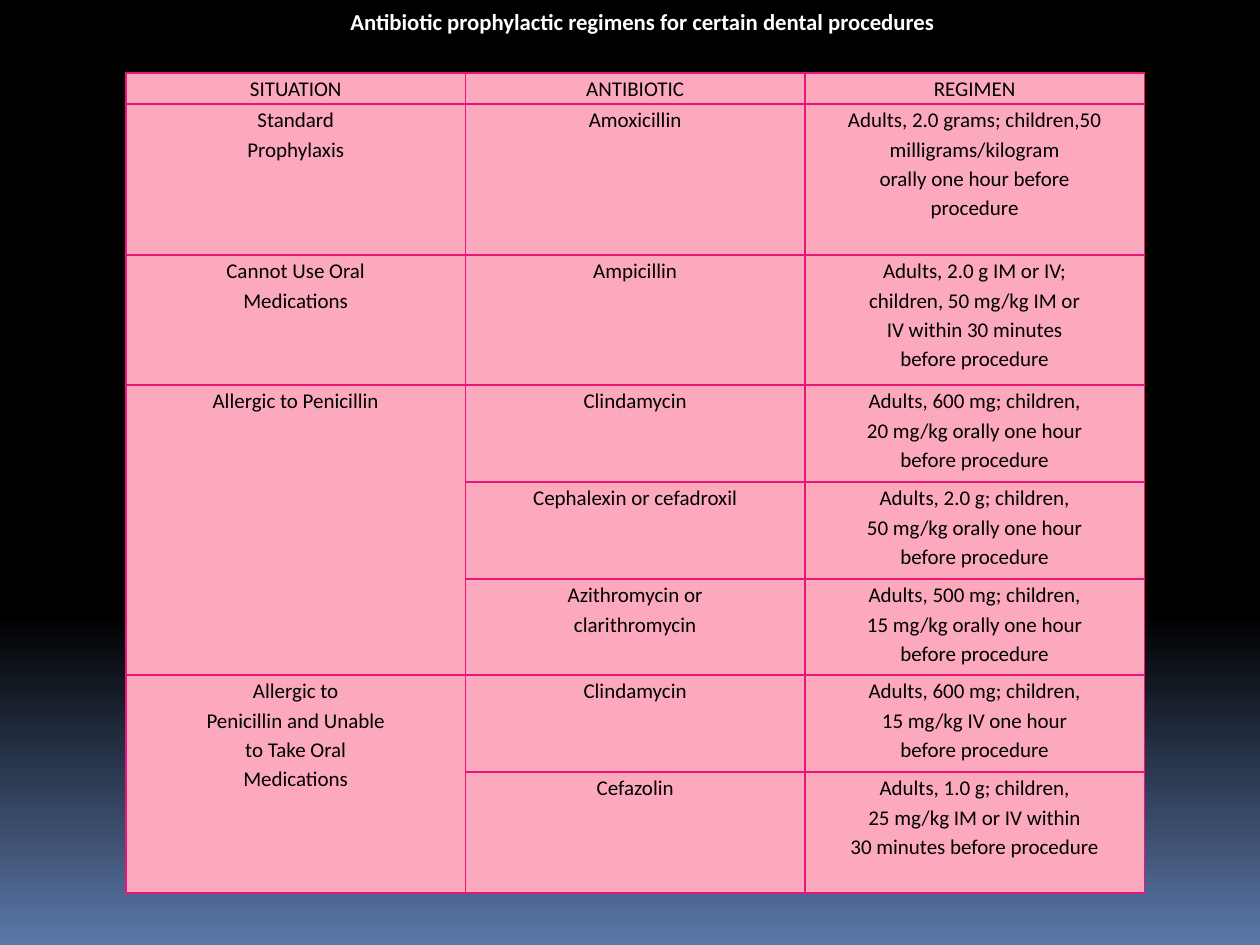
"""Build a slide with a table of antibiotic prophylactic regimens."""
from copy import deepcopy

from lxml import etree
from pptx import Presentation
from pptx import util as u
from pptx.dml.color import RGBColor
from pptx.enum import text
from pptx.oxml.ns import qn

PX = 914400 // 126
TITLE = "Antibiotic prophylactic regimens for certain dental procedures"
ROWS = [
    ("SITUATION", "ANTIBIOTIC", "REGIMEN"),
    ("Standard\nProphylaxis", "Amoxicillin",
     "Adults, 2.0 grams; children,50 milligrams/kilogram\norally one hour before\nprocedure"),
    ("Cannot Use Oral\nMedications", "Ampicillin",
     "Adults, 2.0 g IM or IV;\nchildren, 50 mg/kg IM or\nIV within 30 minutes\nbefore procedure"),
    ("Allergic to Penicillin", "Clindamycin",
     "Adults, 600 mg; children,\n20 mg/kg orally one hour\nbefore procedure"),
    ("", "Cephalexin or cefadroxil",
     "Adults, 2.0 g; children,\n50 mg/kg orally one hour\nbefore procedure"),
    ("", "Azithromycin or\nclarithromycin",
     "Adults, 500 mg; children,\n15 mg/kg orally one hour\nbefore procedure"),
    ("Allergic to\nPenicillin and Unable\nto Take Oral\nMedications", "Clindamycin",
     "Adults, 600 mg; children,\n15 mg/kg IV one hour\nbefore procedure"),
    ("", "Cefazolin",
     "Adults, 1.0 g; children,\n25 mg/kg IM or IV within\n30 minutes before procedure"),
]
HEIGHTS = [31, 151, 130, 97, 97, 96, 97, 121]
MERGES = [(3, 5), (6, 7)]
LEFT, TOP, COL_W = 126, 73, 339.5
PINK, EDGE, BLACK, WHITE, BLUE = "FCA9BD", "EA157A", "000000", "FFFFFF", "5B77A8"
MARGINS = dict(margin_left=u.Inches(0.05), margin_right=u.Inches(0.05),
               margin_top=0, margin_bottom=0)


def px(n):
    return u.Emu(int(n * PX))


def rgb(value):
    return RGBColor.from_string(value)


def assign(obj, values):
    for name, value in values.items():
        setattr(obj, name, value)


def style(p, size, color, bold, spacing):
    assign(p, dict(alignment=text.PP_ALIGN.CENTER, line_spacing=spacing,
                   space_before=u.Pt(0)))
    for r in p.runs:
        assign(r.font, dict(size=u.Pt(size), name="Calibri", bold=bold))
        r.font.color.rgb = rgb(color)


def set_background(s):
    fill = s.background.fill
    fill.gradient()
    fill.gradient_angle = 270
    for stop, (pos, color) in zip(fill.gradient_stops, [(0.65, BLACK), (1, BLUE)]):
        stop.position = pos
        stop.color.rgb = rgb(color)
    stops = s.element.find(".//" + qn("a:gsLst"))
    start = deepcopy(stops[0])
    start.set("pos", "0")
    stops.insert(0, start)


def set_borders(cell):
    tcPr = cell._tc.get_or_add_tcPr()
    for side in ("lnL", "lnR", "lnT", "lnB"):
        ln = etree.SubElement(tcPr, qn("a:" + side), w=str(u.Pt(0.94)))
        solid = etree.SubElement(ln, qn("a:solidFill"))
        etree.SubElement(solid, qn("a:srgbClr"), val=EDGE)


def add_title(s):
    sp = s.shapes.title
    assign(sp, dict(left=px(24), top=px(0), width=px(1236), height=px(42)))
    tf = sp.text_frame
    tf.text = TITLE
    assign(tf, dict(MARGINS, word_wrap=True, vertical_anchor=text.MSO_ANCHOR.MIDDLE))
    style(tf.paragraphs[0], 13, WHITE, True, 1)


def add_regimens(s):
    cols = len(ROWS[0])
    table = s.shapes.add_table(len(ROWS), cols, px(LEFT), px(TOP),
                               px(COL_W * cols), px(sum(HEIGHTS))).table
    assign(table, dict(first_row=False, horz_banding=False))
    for col in table.columns:
        col.width = px(COL_W)
    for row, height, values in zip(table.rows, HEIGHTS, ROWS):
        row.height = px(height)
        for cell, value in zip(row.cells, values):
            set_borders(cell)
            cell.fill.solid()
            cell.fill.fore_color.rgb = rgb(PINK)
            assign(cell, dict(MARGINS, text=value))
            for p in cell.text_frame.paragraphs:
                style(p, 12, BLACK, False, 1.15)
    for first, last in MERGES:
        table.cell(first, 0).merge(table.cell(last, 0))


def main():
    prs = Presentation()
    assign(prs, dict(slide_width=px(1260), slide_height=px(945)))
    s = prs.slides.add_slide(prs.slide_layouts[5])
    set_background(s)
    add_regimens(s)
    add_title(s)
    prs.save("out.pptx")


if __name__ == "__main__":
    main()
